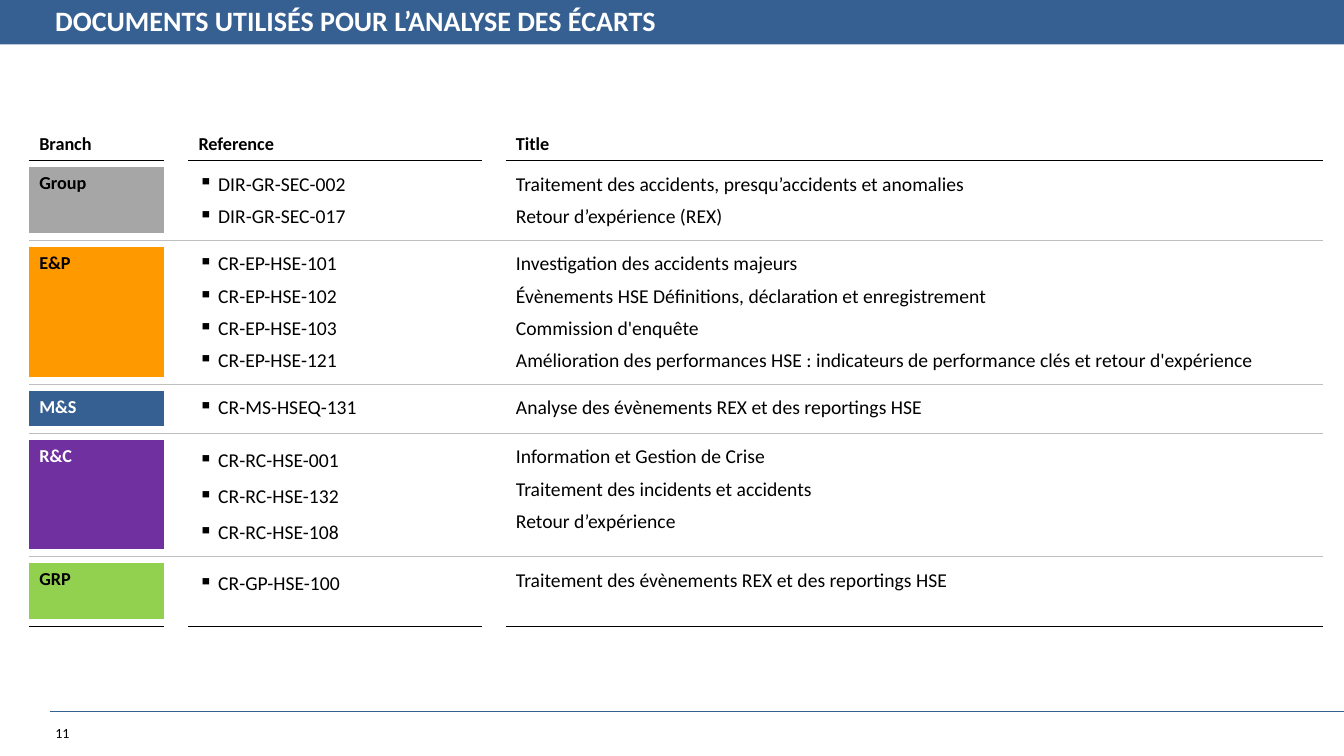
from lxml.etree import SubElement
from pptx import Presentation
from pptx.dml.color import RGBColor
from pptx.enum.shapes import MSO_CONNECTOR as Connector, MSO_SHAPE as Shape
from pptx.enum.text import MSO_ANCHOR as Anchor
from pptx.oxml import parse_xml
from pptx.oxml.ns import nsdecls, qn
from pptx.util import Pt

BLUE = "376092"
BLACK = "000000"
WHITE = "FFFFFF"
GREY = "BFBFBF"
PLAIN_STYLE = "{2D5ABB26-0587-4C30-8999-92F81FD0307C}"

COLUMNS = [96.5, 11.5, 209.5, 11.5, 584]
TEXT_COLUMNS = [0, 2, 4]
HEADER_HEIGHT = 39
GAP_HEIGHT = 5

BRANCHES = [
    ("Group", "A6A6A6", BLACK, 47, 1, [
        ("DIR-GR-SEC-002", "Traitement des accidents, presqu’accidents et anomalies"),
        ("DIR-GR-SEC-017", "Retour d’expérience (REX)"),
    ]),
    ("E&P", "FF9900", BLACK, 93, 1, [
        ("CR-EP-HSE-101", "Investigation des accidents majeurs"),
        ("CR-EP-HSE-102", "Évènements HSE Définitions, déclaration et enregistrement"),
        ("CR-EP-HSE-103", "Commission d'enquête"),
        ("CR-EP-HSE-121", "Amélioration des performances HSE : indicateurs de "
                          "performance clés et retour d'expérience"),
    ]),
    ("M&S", BLUE, WHITE, 25, 1, [
        ("CR-MS-HSEQ-131", "Analyse des évènements REX et des reportings HSE"),
    ]),
    ("R&C", "7030A0", WHITE, 78, 1.15, [
        ("CR-RC-HSE-001", "Information et Gestion de Crise"),
        ("CR-RC-HSE-132", "Traitement des incidents et accidents"),
        ("CR-RC-HSE-108", "Retour d’expérience"),
    ]),
    ("GRP", "92D050", BLACK, 40, 1.15, [
        ("CR-GP-HSE-100", "Traitement des évènements REX et des reportings HSE"),
    ]),
]


def rgb(value):
    return RGBColor.from_string(value)


def write(frame, text, size=14, color=BLACK, bold=False, spacing=1, after=0, bullet=False):
    lines = [text] if isinstance(text, str) else text
    for index, line in enumerate(lines):
        para = frame.add_paragraph() if index else frame.paragraphs[0]
        if bullet:
            props = para._p.get_or_add_pPr()
            props.set("marL", str(Pt(14)))
            props.set("indent", str(-Pt(14)))
            SubElement(props, qn("a:buChar"), char="▪")
        para.line_spacing = spacing
        para.space_after = Pt(after)
        span = para.add_run()
        span.text = line
        span.font.name = "Calibri"
        span.font.size = Pt(size)
        span.font.bold = bold
        span.font.color.rgb = rgb(color)


def add_text(page, left, top, width, height, text, anchor=Anchor.TOP, **style):
    box = page.shapes.add_textbox(Pt(left), Pt(top), Pt(width), Pt(height))
    box.text_frame.word_wrap = True
    box.text_frame.vertical_anchor = anchor
    write(box.text_frame, text, **style)


def add_bar(page, width, height, color):
    bar = page.shapes.add_shape(Shape.RECTANGLE, 0, 0, Pt(width), Pt(height))
    bar.shadow.inherit = False
    bar.fill.solid()
    bar.fill.fore_color.rgb = rgb(color)
    bar.line.fill.background()


def add_rule(page, left, right, y, color):
    rule = page.shapes.add_connector(Connector.STRAIGHT, Pt(left), Pt(y), Pt(right), Pt(y))
    rule.line.color.rgb = rgb(color)
    rule.line.width = Pt(0.75)
    SubElement(rule._element.spPr, qn("a:effectLst"))


def underline(table, row, columns, color):
    for column in columns:
        border = parse_xml(
            f'<a:lnB {nsdecls("a")} w="{Pt(1)}"><a:solidFill>'
            f'<a:srgbClr val="{color}"/></a:solidFill></a:lnB>')
        table.cell(row, column)._tc.get_or_add_tcPr().insert(0, border)


def shrink(cell):
    cell.margin_top = cell.margin_bottom = 0
    SubElement(cell.text_frame.paragraphs[0]._p, qn("a:endParaRPr"), sz="100")


def add_branch(table, row, branch):
    name, fill, color, _, spacing, documents = branch
    references, titles = zip(*documents)
    name_cell = table.cell(row, 0)
    name_cell.fill.solid()
    name_cell.fill.fore_color.rgb = rgb(fill)
    write(name_cell.text_frame, name, size=13, color=color, bold=True)
    write(table.cell(row, 2).text_frame, references, spacing=spacing, after=6, bullet=True)
    write(table.cell(row, 4).text_frame, titles, after=6)


def add_documents(page, left, top):
    heights = [HEADER_HEIGHT]
    for branch in BRANCHES:
        heights += [GAP_HEIGHT, branch[3], GAP_HEIGHT]
    frame = page.shapes.add_table(len(heights), len(COLUMNS), Pt(left), Pt(top),
                                  Pt(sum(COLUMNS)), Pt(sum(heights)))
    table = frame.table
    table._tbl.tblPr.find(qn("a:tableStyleId")).text = PLAIN_STYLE
    table.first_row = table.horz_banding = False
    for column, width in zip(table.columns, COLUMNS):
        column.width = Pt(width)
    for row, height in zip(table.rows, heights):
        row.height = Pt(height)
    for cell in table.iter_cells():
        cell.fill.background()

    for column, heading in zip(TEXT_COLUMNS, ["Branch", "Reference", "Title"]):
        cell = table.cell(0, column)
        cell.vertical_anchor = Anchor.BOTTOM
        write(cell.text_frame, heading, size=13, bold=True)
    underline(table, 0, TEXT_COLUMNS, BLACK)

    for index, branch in enumerate(BRANCHES):
        row = 2 + 3 * index
        add_branch(table, row, branch)
        if index < len(BRANCHES) - 1:
            underline(table, row + 1, range(len(COLUMNS)), GREY)
    underline(table, len(heights) - 1, TEXT_COLUMNS, BLACK)

    for cell in table.iter_cells():
        if not cell.text_frame.text:
            shrink(cell)


def main():
    deck = Presentation()
    deck.slide_width, deck.slide_height = Pt(960), Pt(540)
    page = deck.slides.add_slide(deck.slide_layouts[6])
    add_rule(page, 36, 960, 508.3, BLUE)
    add_text(page, 32.4, 514, 51, 19.5, "11", size=10)
    add_bar(page, 960, 31.7, BLUE)
    add_text(page, 32.4, 0, 556, 31.7, "DOCUMENTS UTILISÉS POUR L’ANALYSE DES ÉCARTS",
             anchor=Anchor.MIDDLE, size=20, color=WHITE, bold=True, spacing=0.9)
    add_documents(page, 20.9, 75.6)
    deck.save("out.pptx")


if __name__ == "__main__":
    main()
